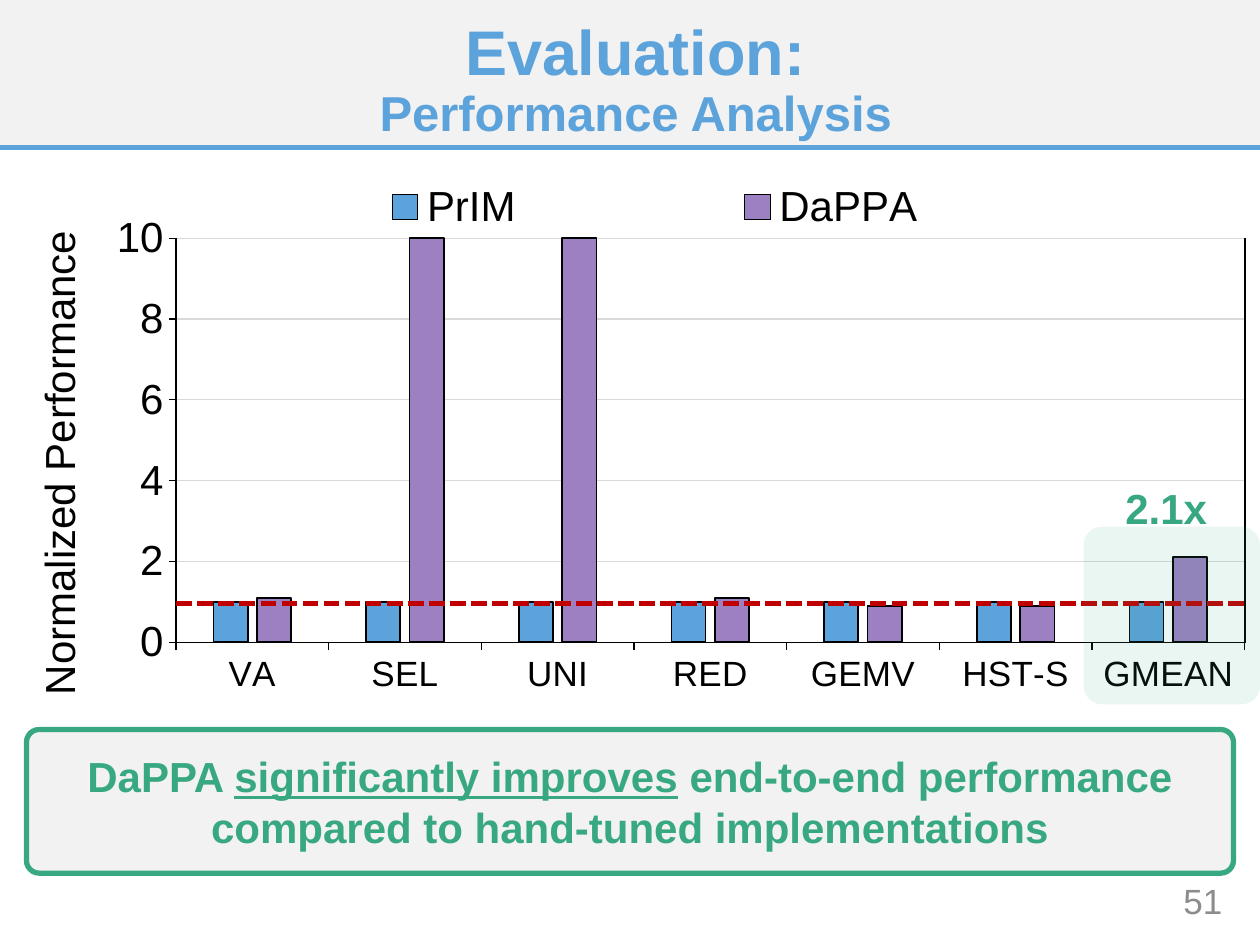
from lxml.etree import SubElement, Element
from pptx import Presentation
from pptx.chart.data import CategoryChartData
from pptx.dml.color import RGBColor
from pptx.enum.chart import XL_CHART_TYPE as CHART, XL_LEGEND_POSITION as LEGEND, XL_TICK_MARK as TICK
from pptx.enum.dml import MSO_LINE as DASH
from pptx.enum.shapes import MSO_CONNECTOR as CONN, MSO_SHAPE as SHAPE
from pptx.enum.text import MSO_ANCHOR as ANCHOR, PP_ALIGN as ALIGN
from pptx.oxml.ns import qn
from pptx.util import Inches, Pt

BLUE, PURPLE, GREEN, RED = "5CA2DB", "9C80C1", "38A881", "C00000"
BLACK, PALE, GRID, GREY = "000000", "F2F2F2", "D9D9D9", "8C8C8C"


def rgb(color):
    """Turn a hex string into a colour."""
    return RGBColor.from_string(color)


def set_layout(el, index, **shares):
    """Give a chart part a manual layout in shares of the chart."""
    for old in el.findall(qn("c:layout")):
        el.remove(old)
    layout = Element(qn("c:layout"))
    el.insert(index, layout)
    manual = SubElement(layout, qn("c:manualLayout"))
    if el.tag == qn("c:plotArea"):
        SubElement(manual, qn("c:layoutTarget"), val="inner")
    for mode in ("xMode", "yMode"):
        SubElement(manual, qn("c:" + mode), val="edge")
    for name, share in shares.items():
        SubElement(manual, qn("c:" + name), val=str(share))


class Deck:
    """Hold the style and the current slide on a grid of 100 columns by 75 rows."""

    font = "Arial"
    cols, rows = 100, 75

    def __init__(self, width, height):
        """Start a presentation with one blank slide."""
        self.prs = Presentation()
        self.prs.slide_width, self.prs.slide_height = Inches(width), Inches(height)
        self.s = self.prs.slides.add_slide(self.prs.slide_layouts[6])

    def box(self, left, top, width, height):
        """Convert columns and rows to lengths."""
        col, row = self.prs.slide_width / self.cols, self.prs.slide_height / self.rows
        return [round(v) for v in (left * col, top * row, width * col, height * row)]

    def style(self, font, size, color, bold=False):
        """Format a font."""
        font.name, font.size, font.bold = self.font, Pt(size), bold
        font.color.rgb = rgb(color)

    def outline(self, line, color, width):
        """Format a line."""
        line.color.rgb, line.width = rgb(color), Pt(width)

    def set_text(self, sp, paragraphs, size, color, bold=True, align=ALIGN.CENTER,
                 anchor=ANCHOR.MIDDLE, spacing=None):
        """Fill a shape with paragraphs, each a list of (text, changes) runs."""
        tf = sp.text_frame
        tf.word_wrap, tf.vertical_anchor = True, anchor
        for i, runs in enumerate(paragraphs):
            p = tf.add_paragraph() if i else tf.paragraphs[0]
            p.alignment, p.line_spacing = align, spacing
            for text, changes in runs:
                r = p.add_run()
                r.text = text
                self.style(r.font, changes.get("size", size), color, bold)
                r.font.underline = changes.get("underline")
                if changes.get("line_break"):
                    p.add_line_break()

    def text(self, at, paragraphs, size, color, **kw):
        """Add a text box."""
        self.set_text(self.s.shapes.add_textbox(*self.box(*at)), paragraphs, size, color, **kw)

    def panel(self, at, fill, radius=None, line=None, alpha=None):
        """Add a plain or rounded rectangle."""
        kind = SHAPE.RECTANGLE if radius is None else SHAPE.ROUNDED_RECTANGLE
        sp = self.s.shapes.add_shape(kind, *self.box(*at))
        sp.shadow.inherit = False
        sp.fill.solid()
        sp.fill.fore_color.rgb = rgb(fill)
        if radius is not None:
            sp.adjustments[0] = radius
        if alpha is not None:
            clr = sp._element.spPr.find(".//" + qn("a:srgbClr"))
            SubElement(clr, qn("a:alpha"), val=str(alpha * 1000))
        if line:
            self.outline(sp.line, line, 3)
        else:
            sp.line.fill.background()
        return sp

    def rule(self, x1, y1, x2, y2, color, width=3, dash=None):
        """Add a straight line."""
        cx = self.s.shapes.add_connector(CONN.STRAIGHT, *self.box(x1, y1, x2, y2))
        self.outline(cx.line, color, width)
        if dash:
            cx.line.dash_style = dash
        SubElement(cx._element.spPr, qn("a:effectLst"))

    def columns(self, at, categories, series, axis_title):
        """Add the clustered column chart."""
        data = CategoryChartData()
        data.categories = categories
        for name, values, _ in series:
            data.add_series(name, values)
        chart = self.s.shapes.add_chart(CHART.COLUMN_CLUSTERED, *self.box(*at), data).chart
        self.style(chart.font, 28, BLACK)
        chart.has_title = False
        plot = chart.plots[0]
        plot.gap_width, plot.overlap, plot.vary_by_categories = 219, -27, False
        for ser, (_, _, color) in zip(plot.series, series):
            ser.format.fill.solid()
            ser.format.fill.fore_color.rgb = rgb(color)
            self.outline(ser.format.line, BLACK, 1)

        for axis, size in ((chart.category_axis, 20), (chart.value_axis, 24)):
            self.style(axis.tick_labels.font, size, BLACK)
            self.outline(axis.format.line, BLACK, 0.75)
            axis.major_tick_mark, axis.minor_tick_mark = TICK.OUTSIDE, TICK.NONE
        value = chart.value_axis
        value.minimum_scale, value.maximum_scale, value.major_unit = 0, 10, 2
        self.outline(value.major_gridlines.format.line, GRID, 0.75)
        tf = value.axis_title.text_frame
        tf.text = axis_title
        self.style(tf.paragraphs[0].runs[0].font, 24, BLACK)
        tf._txBody.bodyPr.set("rot", "-5400000")
        tf._txBody.bodyPr.set("vert", "horz")

        chart.has_legend = True
        legend = chart.legend
        legend.position, legend.include_in_layout = LEGEND.BOTTOM, False
        self.style(legend.font, 24, BLACK)
        set_layout(chart._chartSpace.chart.plotArea, 0, x=0.149, y=0.124, w=0.839, h=0.64)
        set_layout(value.axis_title._element, 1, x=0.03, y=0.1)
        set_layout(legend._element, 1, x=0.15, y=0.03, w=0.75, h=0.09)


def main():
    """Build the slide."""
    deck = Deck(10, 7.5)
    deck.panel((0, 0, 100, 11.7), PALE)
    deck.text((87.2, 69.5, 10.8, 4), [[("51", {})]], 20, GREY, bold=False, align=ALIGN.RIGHT)
    deck.rule(0, 11.7, 100, 11.7, BLUE)
    deck.text((1.8, 1.4, 97.3, 10.1),
              [[("Evaluation:", {"size": 36, "line_break": True}), ("Performance Analysis", {})]],
              28, BLUE, spacing=0.9)

    deck.columns((-1.1, 12.7, 101.1, 50.1),
                 ["VA", "SEL", "UNI", "RED", "GEMV", "HST-S", "GMEAN"],
                 [("PrIM", [1] * 7, BLUE),
                  ("DaPPA", [1.1, 10, 10, 1.1, 0.9, 0.9, 2.1], PURPLE)],
                 "Normalized Performance")
    deck.rule(98.8, 18.9, 98.8, 51, BLACK, width=0.75)
    deck.rule(14, 47.9, 99.1, 47.9, RED, dash=DASH.SQUARE_DOT)

    deck.panel((86, 41.8, 14, 14.1), GREEN, radius=0.105, alpha=10)
    deck.text((86, 37.8, 13.1, 5), [[("2.1x", {})]], 24, GREEN, anchor=ANCHOR.TOP)

    callout = deck.panel((2.1, 57.9, 95.8, 11.4), PALE, radius=0.089, line=GREEN)
    deck.set_text(callout,
                  [[("DaPPA ", {}), ("significantly improves", {"underline": True}),
                    (" end-to-end performance", {})],
                   [("compared to hand-tuned implementations", {})]], 24, GREEN)
    deck.prs.save("out.pptx")


if __name__ == "__main__":
    main()
